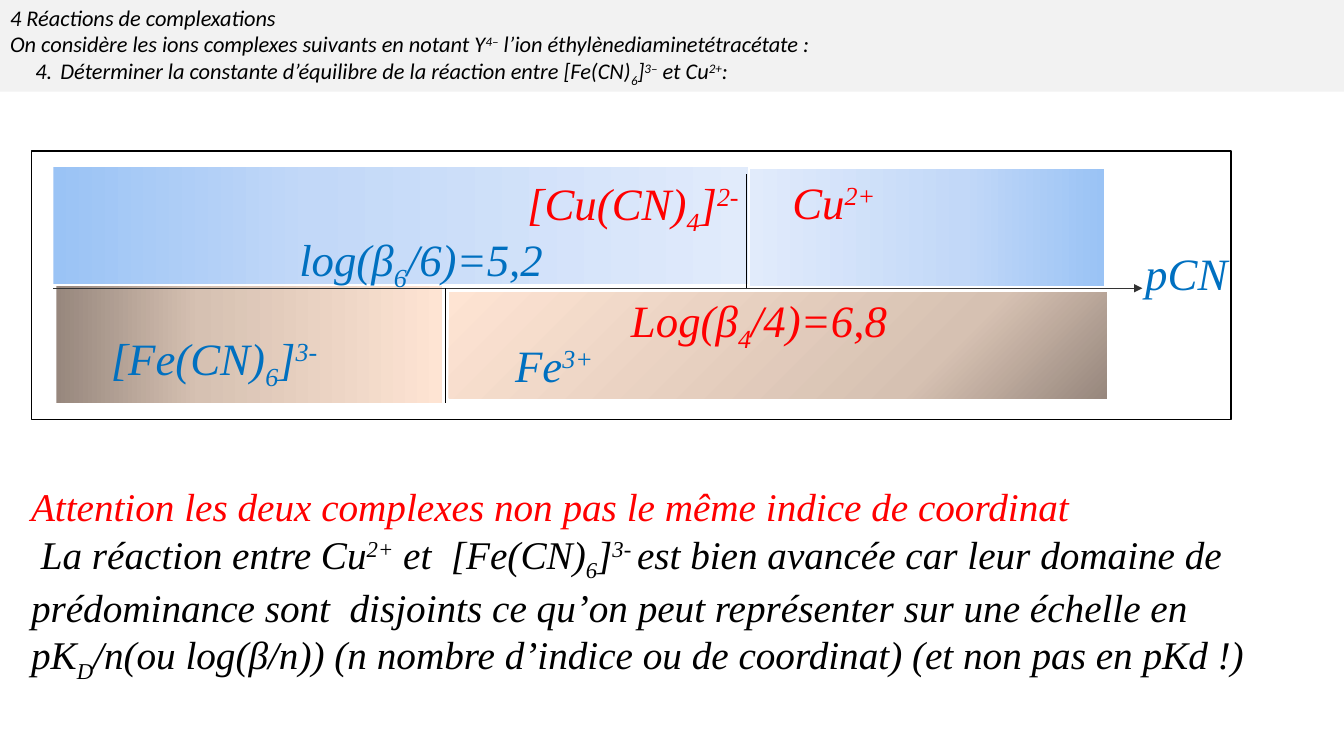
from lxml import etree
from pptx import Presentation
from pptx import util as u
from pptx.dml.color import RGBColor
from pptx.enum import shapes, text
from pptx.oxml import parse_xml
from pptx.oxml.ns import nsdecls, qn

WIDTH, HEIGHT = 13.33, 7.5
BLACK, RED, BLUE = "000000", "FF0000", "0070C0"
COPPER_STOPS = ("9AC3F5", "C2D8F8", "E1EBFB")
IRON_STOPS = ("97877D", "D6C1B2", "FEE4D3")
SERIF = "Times New Roman"
BASELINES = {"^": "30000", "_": "-25000"}


def colour(value):
    return RGBColor.from_string(value)


def inches(*lengths):
    return [u.Inches(length) for length in lengths]


def write(para, markup, size, font, hue):
    """Fill a paragraph; parts between bars start with ^ (raised) or _ (lowered)."""
    para.font.size, para.font.name = u.Pt(size), font
    para.font.italic, para.font.bold = True, False
    para.font.color.rgb = colour(hue)
    for part in markup.split("|"):
        span = para.add_run()
        span.text = part.lstrip("^_")
        if part[0] in BASELINES:
            span._r.get_or_add_rPr().set("baseline", BASELINES[part[0]])


def add_text(page, box, lines, size):
    frame = page.shapes.add_textbox(*inches(*box)).text_frame
    frame.word_wrap = True
    for index, (markup, hue) in enumerate(lines):
        para = frame.add_paragraph() if index else frame.paragraphs[0]
        write(para, markup, size, SERIF, hue)


def add_domain(page, box, stops, middle, direction):
    """Rectangle with a three-colour gradient."""
    domain = page.shapes.add_shape(shapes.MSO_SHAPE.RECTANGLE, *inches(*box))
    domain.shadow.inherit = False
    domain.line.fill.background()
    marks = "".join(
        f'<a:gs pos="{share * 1000}"><a:srgbClr val="{hue}"/></a:gs>'
        for share, hue in zip((0, middle, 100), stops))
    gradient = parse_xml(f'<a:gradFill {nsdecls("a")} rotWithShape="1">'
                         f'<a:gsLst>{marks}</a:gsLst>{direction}</a:gradFill>')
    domain._element.spPr.find(qn("a:prstGeom")).addnext(gradient)


def add_line(page, start, end, hue, width, arrow=False):
    line = page.shapes.add_connector(shapes.MSO_CONNECTOR.STRAIGHT,
                                     *inches(*start, *end))
    line.line.color.rgb = colour(hue)
    line.line.width = u.Pt(width)
    if arrow:
        etree.SubElement(line.line._get_or_add_ln(), qn("a:tailEnd"), type="triangle")
    etree.SubElement(line._element.spPr, qn("a:effectLst"))


def add_header(page, box):
    title = page.shapes.title
    title.left, title.top, title.width, title.height = inches(*box)
    title.fill.solid()
    title.fill.fore_color.rgb = colour("F2F2F2")
    frame = title.text_frame
    frame.word_wrap = True
    frame.auto_size = text.MSO_AUTO_SIZE.NONE
    frame.vertical_anchor = text.MSO_ANCHOR.MIDDLE
    lines = [
        ("4 Réactions de complexations", (0.25,)),
        ("On considère les ions complexes suivants en notant Y|^4–|"
         " l’ion éthylènediaminetétracétate :", (0.25, 0.49)),
        ("4.\tDéterminer la constante d’équilibre de la réaction entre "
         "[Fe(CN)|_6|]|^3–| et Cu|^2+|:", (0.25,)),
    ]
    for index, (markup, tabs) in enumerate(lines):
        para = frame.add_paragraph() if index else frame.paragraphs[0]
        para.alignment = text.PP_ALIGN.JUSTIFY
        props = para._p.get_or_add_pPr()
        if len(tabs) > 1:  # hanging indent
            props.set("marL", str(u.Inches(0.25)))
            props.set("indent", str(-u.Inches(0.25)))
        tab_list = etree.SubElement(props, qn("a:tabLst"))
        for tab in tabs:
            etree.SubElement(tab_list, qn("a:tab"), pos=str(u.Inches(tab)), algn="l")
        write(para, markup, 16, "Calibri", BLACK)


def add_scale(page, box):
    """Predominance diagram: copper above the pCN axis, iron below."""
    left, top, width, height = box

    def place(x, y, *size):
        return (left + x, top + y, *size)

    # Predominance domains
    rightward, leftward = ('<a:lin ang="0" scaled="1"/>',
                           '<a:lin ang="10800000" scaled="1"/>')
    corner = ('<a:path path="circle"><a:fillToRect l="100000" t="100000"/></a:path>'
              '<a:tileRect r="-100000" b="-100000"/>')
    add_domain(page, place(4.14, 1.4, 6.53, 1.05), IRON_STOPS, 27, corner)
    add_domain(page, place(0.22, 0.16, 6.89, 1.16), COPPER_STOPS, 37, rightward)
    add_domain(page, place(0.25, 1.34, 3.82, 1.16), IRON_STOPS, 37, rightward)
    add_domain(page, place(7.13, 0.18, 3.51, 1.16), COPPER_STOPS, 40, leftward)

    # Axis and boundaries
    axis = 1.36
    add_line(page, place(0.22, axis), place(11.02, axis), "333333", 0.75, arrow=True)
    add_line(page, place(4.11, axis), place(4.11, 2.5), BLACK, 0.5)
    add_line(page, place(7.09, 0.23), place(7.09, axis), BLACK, 0.75)

    # Species and boundary values
    labels = [
        ("pCN", BLUE, 10.95, 0.89, 2.08),
        ("Fe|^3+", BLUE, 4.7, 1.8, 2.49),
        ("log(β|_6|/6)=5,2", BLUE, 2.56, 0.75, 3.86),
        ("[Cu(CN)|_4|]|^2-", RED, 4.82, 0.19, 3.54),
        ("Log(β|_4|/4)=6,8", RED, 5.85, 1.35, 3.3),
        ("Cu|^2+", RED, 7.45, 0.18, 1.82),
        ("[Fe(CN)|_6|]|^3-", BLUE, 0.69, 1.73, 3.32),
    ]
    for markup, hue, x, y, span_width in labels:
        add_text(page, place(x, y, span_width, 0.9), [(markup, hue)], 32)

    # Outline
    outline = page.shapes.add_shape(shapes.MSO_SHAPE.RECTANGLE, *inches(*box))
    outline.shadow.inherit = False
    outline.fill.background()
    outline.line.color.rgb = colour(BLACK)
    outline.line.width = u.Pt(1)


def add_comment(page, box):
    add_text(page, box, [
        ("Attention les deux complexes non pas le même indice de coordinat", RED),
        (" La réaction entre Cu|^2+| et  [Fe(CN)|_6|]|^3- |est bien avancée car leur "
         "domaine de prédominance sont  disjoints ce qu’on peut représenter sur une "
         "échelle en", BLACK),
        ("pK|_D|/n(ou log(β/n)) (n nombre d’indice ou de coordinat) "
         "(et non pas en pKd !)", BLACK),
    ], 28)


def main():
    deck = Presentation()
    deck.slide_width, deck.slide_height = inches(WIDTH, HEIGHT)
    page = deck.slides.add_slide(deck.slide_layouts.get_by_name("Title Only"))
    add_header(page, (0, 0, WIDTH, 0.91))
    add_scale(page, (0.31, 1.5, 11.9, 2.66))
    add_comment(page, (0.21, 4.74, 12.35, 1.99))
    deck.save("out.pptx")


if __name__ == "__main__":
    main()
